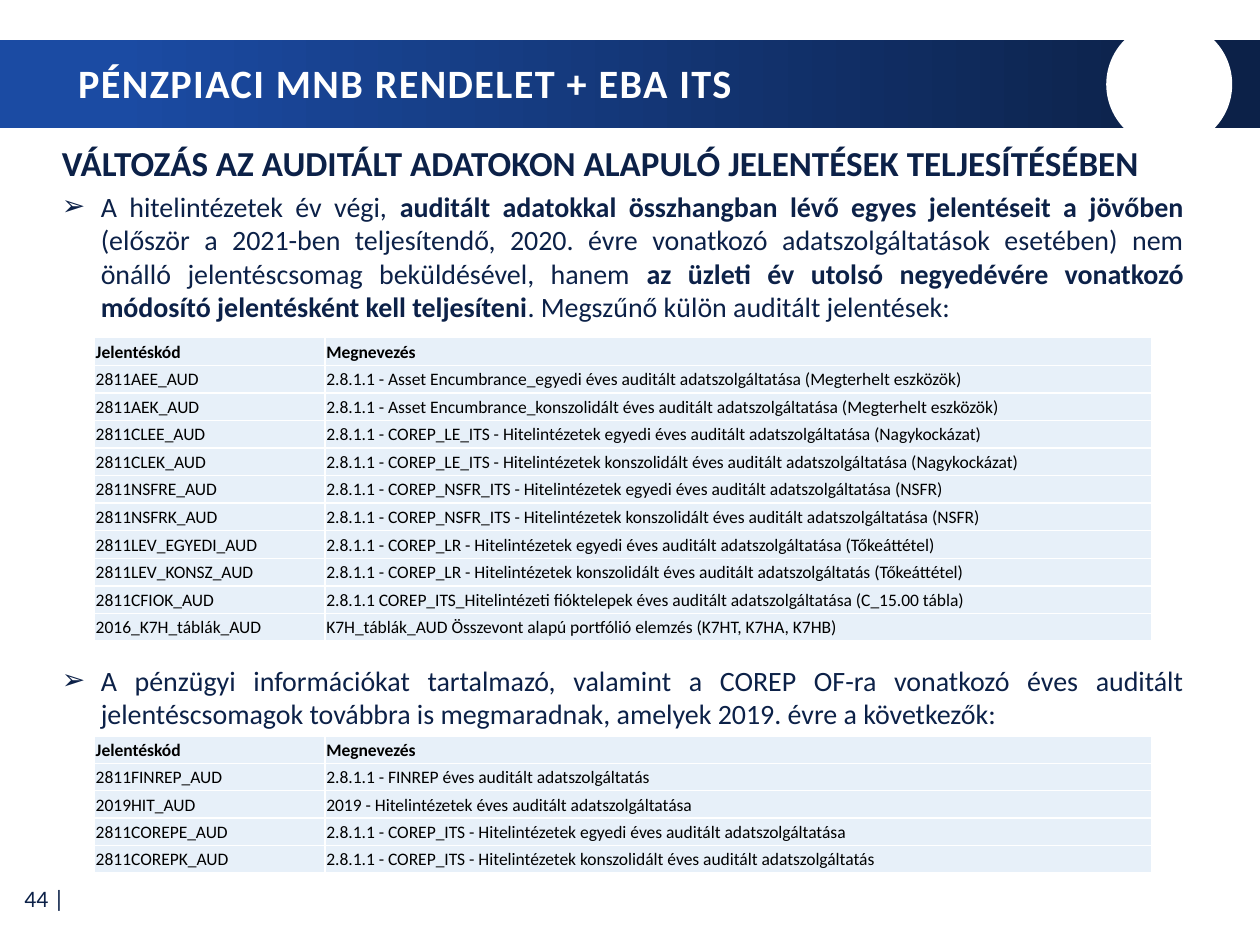
from dataclasses import dataclass

from lxml import etree
from pptx import Presentation
from pptx import util as u
from pptx.dml.color import RGBColor
from pptx.enum import shapes, text
from pptx.oxml import ns


@dataclass(frozen=True)
class Theme:
    font: str = "Calibri"
    navy: RGBColor = RGBColor(0x0C, 0x21, 0x48)
    blue: RGBColor = RGBColor(0x1B, 0x4B, 0xA3)
    white: RGBColor = RGBColor(0xFF, 0xFF, 0xFF)
    black: RGBColor = RGBColor(0, 0, 0)
    cell: RGBColor = RGBColor(0xE7, 0xF0, 0xF9)
    title: float = 23
    heading: float = 20
    body: float = 16
    number: float = 13.5
    table: float = 10


theme = Theme()


def set_font(paragraph, size, color, bold=None):
    font = paragraph.font
    font.name, font.size, font.bold = theme.font, u.Pt(size), bold
    font.color.rgb = color


def add_element(parent, tag, **attributes):
    return etree.SubElement(parent, ns.qn(tag), attributes)


deck = Presentation()
deck.slide_width, deck.slide_height = u.Inches(10), u.Inches(7.5)
page = deck.slides.add_slide(deck.slide_layouts[1])
title, body = page.shapes.title, page.placeholders[1]

# Header band with the white disc, behind the title
band = page.shapes.add_shape(shapes.MSO_SHAPE.RECTANGLE, 0, u.Inches(0.32), u.Inches(10), u.Inches(0.7))
band.fill.gradient()
band.fill.gradient_angle = 0
for stop, position, color in zip(band.fill.gradient_stops, (0.09, 0.95), (theme.blue, theme.navy)):
    stop.position, stop.color.rgb = position, color
disc = page.shapes.add_shape(shapes.MSO_SHAPE.OVAL, u.Inches(8.78), u.Inches(0.17), u.Inches(1), u.Inches(1))
disc.fill.solid()
disc.fill.fore_color.rgb = theme.white
for shape in (band, disc):
    shape.line.fill.background()
    shape.shadow.inherit = False
    title.element.addprevious(shape.element)

# Title
title.left, title.top, title.width, title.height = map(u.Inches, (0.52, 0.34, 8.32, 0.67))
title.text_frame.auto_size = text.MSO_AUTO_SIZE.NONE
title.text_frame.vertical_anchor = text.MSO_ANCHOR.MIDDLE
para = title.text_frame.paragraphs[0]
para.alignment, para.line_spacing = text.PP_ALIGN.LEFT, 0.9
set_font(para, theme.title, theme.white, True)
span = para.add_run()
span.text = "PÉNZPIACI MNB RENDELET + EBA ITS"
span.font.element.set("spc", "80") if hasattr(span.font, "element") else span.font._element.set("spc", "80")

# Heading and the two bullets; the second bullet leaves room for the first table
body.left, body.top, body.width, body.height = map(u.Inches, (0.39, 1.11, 9.11, 6.05))
frame = body.text_frame
frame.auto_size = text.MSO_AUTO_SIZE.NONE
para = frame.paragraphs[0]
para.text = "VÁLTOZÁS AZ AUDITÁLT ADATOKON ALAPULÓ JELENTÉSEK TELJESÍTÉSÉBEN"
para.line_spacing, para.space_before = 0.9, u.Pt(0)
properties = para._p.get_or_add_pPr()
properties.set("marL", "0")
properties.set("indent", "0")
add_element(properties, "a:buNone")
set_font(para, theme.heading, theme.navy, True)

bullets = [
    (3, [
        ("A hitelintézetek év végi, ", False),
        ("auditált adatokkal összhangban lévő egyes jelentéseit a jövőben", True),
        (" (először a 2021-ben teljesítendő, 2020. évre vonatkozó adatszolgáltatások esetében) nem önálló "
         "jelentéscsomag beküldésével, hanem ", False),
        ("az üzleti év utolsó negyedévére vonatkozó módosító jelentésként kell teljesíteni", True),
        (". Megszűnő külön auditált jelentések:", False),
    ]),
    (194, [
        ("A pénzügyi információkat tartalmazó, valamint a COREP OF-ra vonatkozó éves auditált "
         "jelentéscsomagok továbbra is megmaradnak, amelyek 2019. évre a következők:", False),
    ]),
]
for space, spans in bullets:
    para = frame.add_paragraph()
    para.alignment, para.space_before = text.PP_ALIGN.JUSTIFY, u.Pt(space)
    properties = para._p.get_or_add_pPr()
    properties.set("marL", str(u.Inches(0.31)))
    properties.set("indent", str(-u.Inches(0.31)))
    add_element(properties, "a:buChar", char="➢")
    set_font(para, theme.body, theme.navy)
    for words, bold in spans:
        span = para.add_run()
        span.text, span.font.bold = words, bold

# Tables of report codes
header = ("Jelentéskód", "Megnevezés")
ended = [
    header,
    ("2811AEE_AUD", "2.8.1.1 - Asset Encumbrance_egyedi éves auditált adatszolgáltatása (Megterhelt eszközök)"),
    ("2811AEK_AUD", "2.8.1.1 - Asset Encumbrance_konszolidált éves auditált adatszolgáltatása (Megterhelt eszközök)"),
    ("2811CLEE_AUD", "2.8.1.1 - COREP_LE_ITS - Hitelintézetek egyedi éves auditált adatszolgáltatása (Nagykockázat)"),
    ("2811CLEK_AUD",
     "2.8.1.1 - COREP_LE_ITS - Hitelintézetek konszolidált éves auditált adatszolgáltatása (Nagykockázat)"),
    ("2811NSFRE_AUD", "2.8.1.1 - COREP_NSFR_ITS - Hitelintézetek egyedi éves auditált adatszolgáltatása (NSFR)"),
    ("2811NSFRK_AUD", "2.8.1.1 - COREP_NSFR_ITS - Hitelintézetek konszolidált éves auditált adatszolgáltatása (NSFR)"),
    ("2811LEV_EGYEDI_AUD", "2.8.1.1 - COREP_LR - Hitelintézetek egyedi éves auditált adatszolgáltatása (Tőkeáttétel)"),
    ("2811LEV_KONSZ_AUD",
     "2.8.1.1 - COREP_LR - Hitelintézetek konszolidált éves auditált adatszolgáltatás (Tőkeáttétel)"),
    ("2811CFIOK_AUD", "2.8.1.1 COREP_ITS_Hitelintézeti fióktelepek éves auditált adatszolgáltatása (C_15.00 tábla)"),
    ("2016_K7H_táblák_AUD", "K7H_táblák_AUD Összevont alapú portfólió elemzés (K7HT, K7HA, K7HB)"),
]
kept = [
    header,
    ("2811FINREP_AUD", "2.8.1.1 - FINREP éves auditált adatszolgáltatás"),
    ("2019HIT_AUD", "2019 - Hitelintézetek éves auditált adatszolgáltatása"),
    ("2811COREPE_AUD", "2.8.1.1 - COREP_ITS - Hitelintézetek egyedi éves auditált adatszolgáltatása"),
    ("2811COREPK_AUD", "2.8.1.1 - COREP_ITS - Hitelintézetek konszolidált éves auditált adatszolgáltatás"),
]
for rows, top, height in ((ended, 2.68, 2.41), (kept, 5.84, 1.09)):
    table = page.shapes.add_table(
        len(rows), 2, u.Inches(0.75), u.Inches(top), u.Inches(8.39), u.Inches(height)).table
    table.horz_banding = table.first_row = False
    table.columns[0].width, table.columns[1].width = u.Inches(1.83), u.Inches(6.56)
    for row_index, row in enumerate(rows):
        for column_index, words in enumerate(row):
            cell = table.cell(row_index, column_index)
            cell.margin_left = cell.margin_right = cell.margin_top = u.Inches(0.01)
            cell.margin_bottom = 0
            cell.vertical_anchor = text.MSO_ANCHOR.MIDDLE
            for side in ("a:lnL", "a:lnR", "a:lnT", "a:lnB"):
                border = add_element(cell._tc.get_or_add_tcPr(), side, w=str(u.Pt(1)))
                add_element(add_element(border, "a:solidFill"), "a:srgbClr", val=str(theme.white))
            cell.fill.solid()
            cell.fill.fore_color.rgb = theme.cell
            para = cell.text_frame.paragraphs[0]
            para.text = words
            set_font(para, theme.table, theme.black, row_index == 0)

# Page number
box = page.shapes.add_textbox(u.Inches(0.01), u.Inches(6.94), u.Inches(0.6), u.Inches(0.37))
box.text_frame.word_wrap = True
box.text_frame.vertical_anchor = text.MSO_ANCHOR.MIDDLE
para = box.text_frame.paragraphs[0]
para.text, para.alignment = "44 |", text.PP_ALIGN.RIGHT
set_font(para, theme.number, theme.navy)

deck.save("out.pptx")
